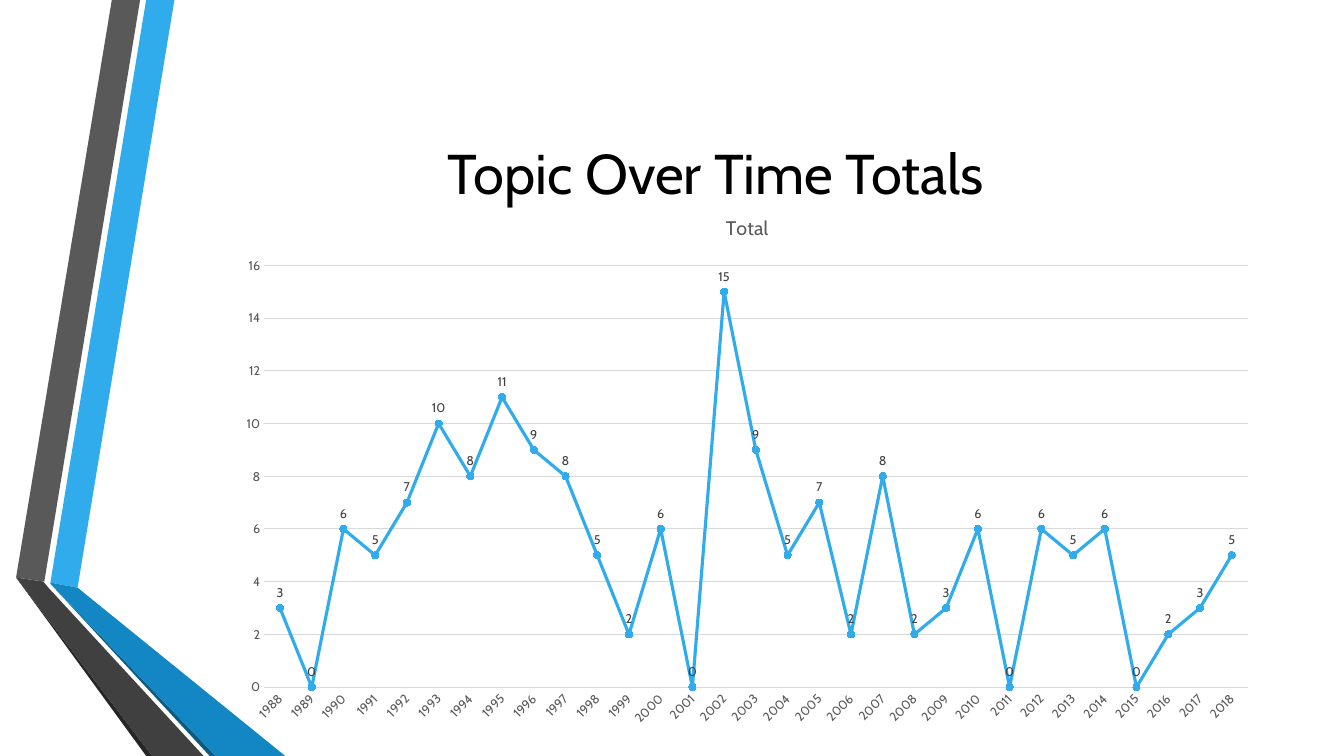
"""Build a slide with a line chart of topic totals by year beside a folded ribbon."""
from pptx import Presentation
from pptx.chart.data import CategoryChartData
from pptx.dml.color import RGBColor
from pptx.enum.chart import XL_CHART_TYPE, XL_LABEL_POSITION, XL_MARKER_STYLE, XL_TICK_MARK
from pptx.enum.text import MSO_ANCHOR, PP_ALIGN
from pptx.util import Inches, Pt

FONT = "Cabin"
BLUE, GRAY, GRID = "30ACEC", "595959", "D9D9D9"


def rgb(hex_string):
    return RGBColor.from_string(hex_string)


def write(frame, text, size, color, align=PP_ALIGN.CENTER, bold=False):
    frame.text = text
    paragraph = frame.paragraphs[0]
    paragraph.alignment = align
    font = paragraph.runs[0].font
    font.name, font.size, font.bold = FONT, Pt(size), bold
    font.color.rgb = rgb(color)


deck = Presentation()
deck.slide_width, deck.slide_height = Inches(13.33), Inches(7.5)
slide = deck.slides.add_slide(deck.slide_layouts[5])

ribbon_faces = [
    (BLUE, [(0.5, 5.78), (0.77, 5.83), (1.73, 0), (1.45, 0)]),
    (GRAY, [(1.39, 0), (1.11, 0), (0.16, 5.73), (0.44, 5.77)]),
    ("262626", [(0.16, 5.73), (1.45, 7.5), (1.51, 7.5)]),
    ("0C5A82", [(0.5, 5.79), (2.08, 7.5), (2.14, 7.5)]),
    ("1287C3", [(0.5, 5.78), (0.5, 5.79), (2.14, 7.5), (2.83, 7.5), (0.77, 5.83)]),
    ("404040", [(2.02, 7.5), (0.48, 5.83), (0.43, 5.77), (0.16, 5.73), (1.51, 7.5)]),
]
for color, corners in ribbon_faces:
    points = [(round(x * 100), round(y * 100)) for x, y in corners]
    outline = slide.shapes.build_freeform(*points[0], scale=Inches(0.01))
    outline.add_line_segments(points[1:], close=True)
    face = outline.convert_to_shape()
    face.shadow.inherit = False
    face.fill.solid()
    face.fill.fore_color.rgb = rgb(color)
    face.line.fill.background()

heading = slide.shapes.title
heading.left, heading.top = Inches(1.62), Inches(0.75)
heading.width, heading.height = Inches(10.96), Inches(1.92)
heading.text_frame.vertical_anchor = MSO_ANCHOR.MIDDLE
write(heading.text_frame, "Topic Over Time Totals", size=40, color="000000")

totals_by_year = CategoryChartData()
totals_by_year.categories = [str(year) for year in range(1988, 2019)]
totals_by_year.add_series("Total", [
    3, 0, 6, 5, 7, 10, 8, 11, 9, 8, 5, 2, 6, 0, 15, 9,
    5, 7, 2, 8, 2, 3, 6, 0, 6, 5, 6, 0, 2, 3, 5])
chart = slide.shapes.add_chart(
    XL_CHART_TYPE.LINE_MARKERS_STACKED, Inches(2.24), Inches(1.93),
    Inches(10.34), Inches(5.38), totals_by_year).chart
chart.has_legend = False
chart.font.name, chart.font.size = FONT, Pt(10)
chart.font.color.rgb = rgb("000000")
chart.has_title = True
chart.chart_title.include_in_layout = False
write(chart.chart_title.text_frame, "Total", size=14, color=GRAY)

years, counts = chart.category_axis, chart.value_axis
counts.minimum_scale, counts.maximum_scale, counts.major_unit = 0, 16, 2
counts.has_major_gridlines = True
for axis in (years, counts):
    axis.major_tick_mark = axis.minor_tick_mark = XL_TICK_MARK.NONE
for line in (years.format.line, counts.major_gridlines.format.line):
    line.color.rgb = rgb(GRID)
    line.width = Pt(0.75)
counts.format.line.fill.background()

plot = chart.plots[0]
plot.vary_by_categories = False
totals = plot.series[0]
totals.smooth = False
totals.format.line.color.rgb = rgb(BLUE)
totals.format.line.width = Pt(2.25)
totals.marker.style, totals.marker.size = XL_MARKER_STYLE.CIRCLE, 5
totals.marker.format.fill.solid()
totals.marker.format.fill.fore_color.rgb = rgb(BLUE)
totals.marker.format.line.color.rgb = rgb(BLUE)
values = totals.data_labels
values.show_value = True
values.position = XL_LABEL_POSITION.ABOVE

for labels, color in ((years.tick_labels, GRAY), (counts.tick_labels, GRAY), (values, "404040")):
    labels.font.name, labels.font.size = FONT, Pt(9)
    labels.font.color.rgb = rgb(color)
chart.element.xpath(".//c:catAx/c:txPr/a:bodyPr")[0].set("rot", str(-45 * 60000))

deck.save("out.pptx")
